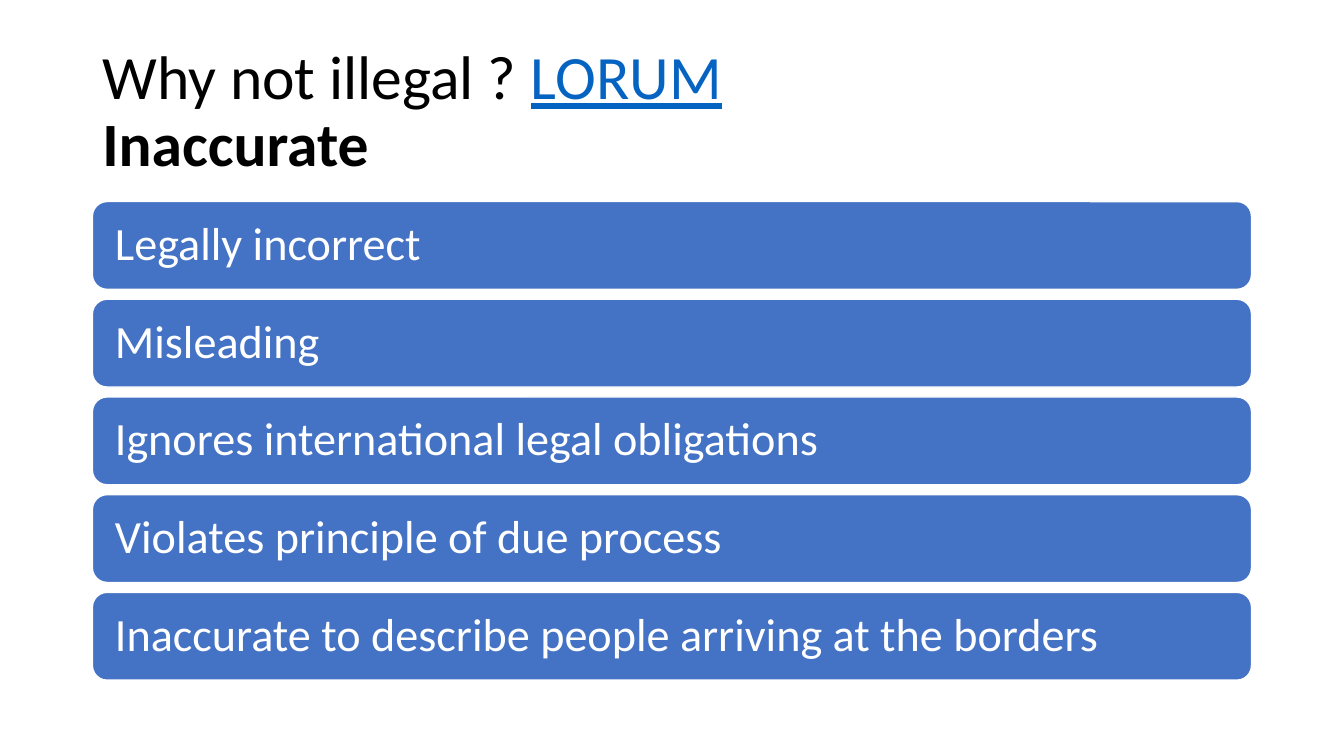
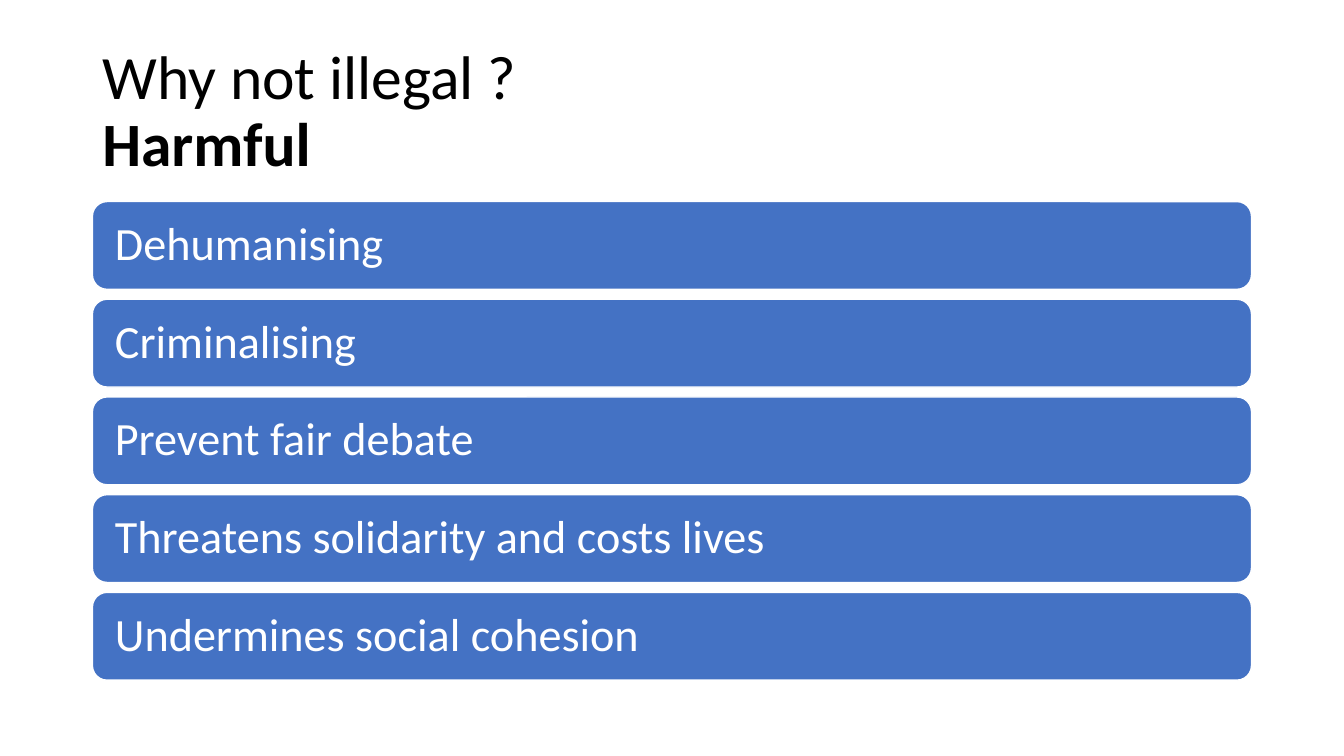
"""Build two slides, each with a two-line title over a stack of bars."""
from pptx import Presentation
from pptx.dml.color import RGBColor
from pptx.enum.shapes import MSO_SHAPE as Shape
from pptx.enum.text import MSO_ANCHOR as Anchor, PP_ALIGN as Align
from pptx.util import Cm, Pt

FONT = "Calibri"
BLACK, WHITE, BLUE, LINK = "000000", "FFFFFF", "4472C4", "0563C1"
TITLE_BOX = (2.33, 1.01, 29.21, 3.68)
BARS_BOX = (2.33, 5.08, 29.21, 12.06)
BAR_GAP = 0.25
BAR_INSET = 0.46

SLIDES = [
    ([("Why not illegal ? ", BLACK, False), ("LORUM", LINK, True)], "Inaccurate", [
        "Legally incorrect",
        "Misleading",
        "Ignores international legal obligations",
        "Violates principle of due process",
        "Inaccurate to describe people arriving at the borders",
    ]),
    ([("Why not illegal ?", BLACK, False)], "Harmful", [
        "Dehumanising",
        "Criminalising",
        "Prevent fair debate",
        "Threatens solidarity and costs lives",
        "Undermines social cohesion",
    ]),
]


def colour(value):
    """Turn a hex string into a colour."""
    return RGBColor.from_string(value)


def add_span(para, text, size, tint, bold=False, underline=False):
    """Add one styled run to a paragraph."""
    span = para.add_run()
    span.text = text
    font = span.font
    font.name, font.size = FONT, Pt(size)
    font.bold, font.underline = bold, underline
    font.color.rgb = colour(tint)


def first_para(shape):
    """Prepare the text frame of a shape and return its paragraph."""
    frame = shape.text_frame
    frame.word_wrap = True
    frame.vertical_anchor = Anchor.MIDDLE
    para = frame.paragraphs[0]
    para.alignment = Align.LEFT
    para.line_spacing = 0.9
    return para


def add_title(page, box, question, answer):
    """Place the question with its bold answer on the line below."""
    para = first_para(page.shapes.add_textbox(*map(Cm, box)))
    for text, tint, underline in question:
        add_span(para, text, 44, tint, underline=underline)
    para.add_line_break()
    add_span(para, answer, 44, BLACK, bold=True)


def add_bar(page, box, label):
    """Draw one rounded bar with its label."""
    bar = page.shapes.add_shape(Shape.ROUNDED_RECTANGLE, *map(Cm, box))
    bar.shadow.inherit = False
    bar.fill.solid()
    bar.fill.fore_color.rgb = colour(BLUE)
    bar.line.color.rgb = colour(WHITE)
    bar.line.width = Pt(1)
    para = first_para(bar)
    para.space_after = Pt(14)
    frame = bar.text_frame
    frame.margin_left = frame.margin_right = Cm(BAR_INSET)
    frame.margin_top = frame.margin_bottom = Cm(BAR_INSET)
    add_span(para, label, 33, WHITE)


def add_bars(page, box, labels):
    """Stack equal bars with equal gaps to fill the box."""
    left, top, width, height = box
    bar_height = (height + BAR_GAP) / len(labels) - BAR_GAP
    for index, label in enumerate(labels):
        bar_top = top + index * (bar_height + BAR_GAP)
        add_bar(page, (left, bar_top, width, bar_height), label)


def main():
    """Build and save the deck."""
    deck = Presentation()
    deck.slide_width, deck.slide_height = Cm(33.87), Cm(19.05)
    for question, answer, labels in SLIDES:
        page = deck.slides.add_slide(deck.slide_layouts[6])
        add_title(page, TITLE_BOX, question, answer)
        add_bars(page, BARS_BOX, labels)
    deck.save("out.pptx")


if __name__ == "__main__":
    main()
